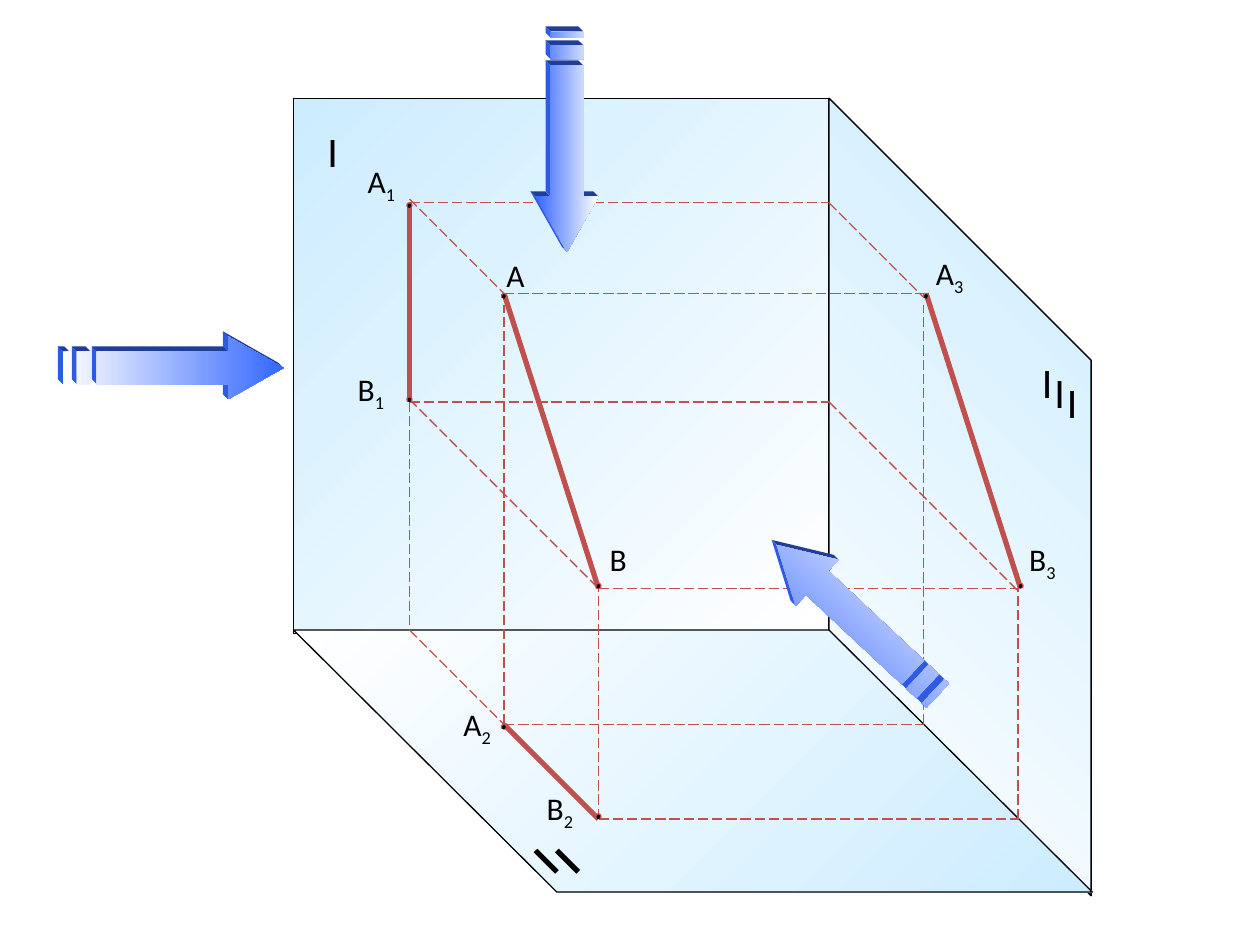
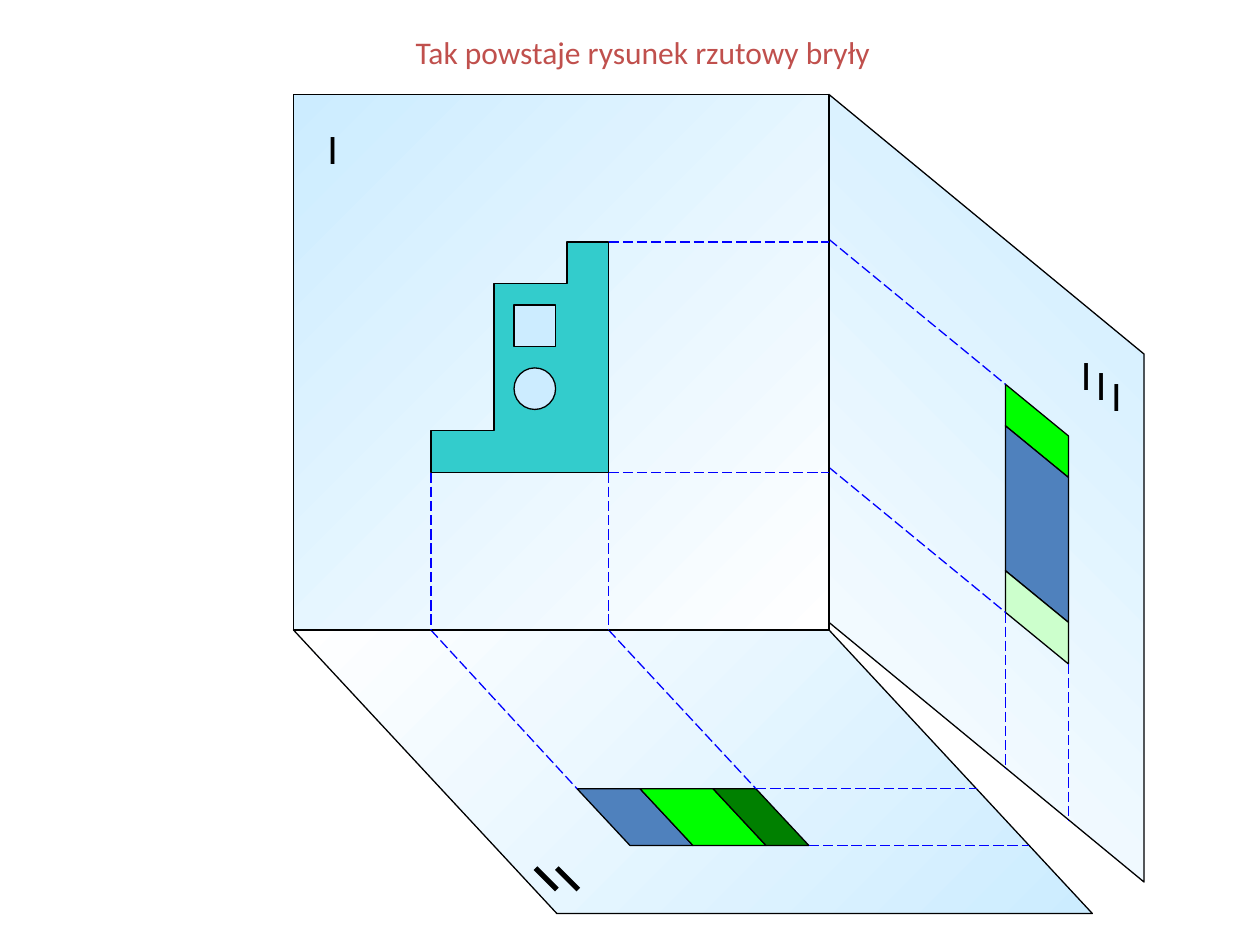
from math import cos, radians, sin

from lxml import etree
from pptx import Presentation
from pptx.dml.color import RGBColor
from pptx.enum import dml, shapes, text
from pptx.oxml import ns
from pptx.util import Inches, Pt

FONT = "Calibri"
BLACK = "000000"
WHITE = "FFFFFF"
SKY = "CCECFF"
RED = "C0504D"
BLUE = "0000FF"
STEEL = "4F81BD"
LIME = "00FF00"
ARROW = "3366FF"
TOP = "1F3D99"
SIDE = "2D5BE3"
EDGE = 4.25
RECT = shapes.MSO_SHAPE.RECTANGLE
OVAL = shapes.MSO_SHAPE.OVAL


def tint(value):
    return RGBColor.from_string(value)


def shift(x, y, points):
    return [(x + a, y + b) for a, b in points]


def paint(shape, fill, line=BLACK, width=0.75, dash=False):
    shape.shadow.inherit = False
    if isinstance(fill, str):
        shape.fill.solid()
        shape.fill.fore_color.rgb = tint(fill)
    else:
        first, last, angle = fill
        shape.fill.gradient()
        shape.fill.gradient_angle = -angle % 360
        for stop, color in zip(shape.fill.gradient_stops, (first, last)):
            stop.color.rgb = tint(color)
    if line:
        shape.line.color.rgb = tint(line)
        shape.line.width = Pt(width)
        if dash:
            shape.line.dash_style = dml.MSO_LINE.LONG_DASH
    else:
        shape.line.fill.background()


def block(slide, kind, x, y, w, h, fill, **style):
    shape = slide.shapes.add_shape(kind, Inches(x), Inches(y), Inches(w), Inches(h))
    paint(shape, fill, **style)


def outline(slide, loops, fill, **style):
    loops = [[(Inches(x), Inches(y)) for x, y in loop] for loop in loops]
    pen = slide.shapes.build_freeform(*loops[0][0], scale=1.0)
    pen.add_line_segments(loops[0][1:], close=True)
    for loop in loops[1:]:
        pen.move_to(*loop[0])
        pen.add_line_segments(loop[1:], close=True)
    paint(pen.convert_to_shape(), fill, **style)


def trace(slide, points, color, width=0.75, dash=True):
    for start, end in zip(points, points[1:]):
        ends = [Inches(v) for v in start + end]
        line = slide.shapes.add_connector(shapes.MSO_CONNECTOR.STRAIGHT, *ends)
        line.line.color.rgb = tint(color)
        line.line.width = Pt(width)
        if dash:
            line.line.dash_style = dml.MSO_LINE.LONG_DASH
        etree.SubElement(line._element.spPr, ns.qn("a:effectLst"))


def write(slide, words, x, y, w, h=0.37, size=18, color=BLACK, sub="",
          wrap=False, anchor=text.MSO_ANCHOR.MIDDLE):
    box = slide.shapes.add_textbox(Inches(x), Inches(y), Inches(w), Inches(h))
    frame = box.text_frame
    frame.word_wrap = wrap
    frame.auto_size = text.MSO_AUTO_SIZE.SHAPE_TO_FIT_TEXT
    frame.vertical_anchor = anchor
    for part in filter(None, (words, sub)):
        run = frame.paragraphs[0].add_run()
        run.text = part
        run.font.name = FONT
        run.font.size = Pt(size)
        run.font.color.rgb = tint(color)
    if sub:
        run._r.get_or_add_rPr().set("baseline", "-25000")


def mark(slide, x, y, w):
    write(slide, "I", x, y, w, 0.5, size=24, wrap=True, anchor=text.MSO_ANCHOR.TOP)


def front(slide, x, y):
    block(slide, RECT, x, y, EDGE, EDGE, (SKY, WHITE, 45))
    mark(slide, x + 0.17, y + 0.17, 0.25)


def wall(slide, x, y, w, drop, h, sign, step):
    corners = [(w, drop + h), (w, drop), (0, 0), (0, h)]
    outline(slide, [shift(x, y, corners)], (WHITE, SKY, 315))
    for i in range(3):
        mark(slide, x + sign[0] + i * step[0], y + sign[1] + i * step[1], 0.3)


def ground(slide, x, y, depth, sign):
    corners = [(0, 0), (EDGE, 0), (EDGE + 2.09, depth), (2.09, depth)]
    outline(slide, [shift(x, y, corners)], (WHITE, SKY, 45))
    for i in range(2):
        bar = [(0, 0), (0.17, 0.17)]
        trace(slide, shift(x + 1.92 + i * 0.17, y + sign, bar), BLACK, 3, False)


def segment(slide, x, y):
    a, b = (0.75, 0.72), (1.5, 3.06)
    a1, b1 = (0, 0), (0, 1.58)
    a2, b2 = (0.75, 4.14), (1.5, 4.89)
    a3, b3 = (4.1, 0.72), (4.85, 3.06)
    rays = [
        [(0, -0.03), a], [(0, 1.56), b], [a2, (0.75, 0.81)], [b2, b],
        [b1, (0, 3.39), b2],
        [a1, (3.33, 0), (4.08, 0.75)],
        [b1, (3.33, 1.58), (4.83, 3.08)],
        [a, (4.08, 0.72)], [b, (4.83, 3.06)],
        [a2, (4.08, 4.14), (4.08, 0.81)],
        [b2, (4.83, 4.89), (4.83, 3.06)],
    ]
    for ray in rays:
        trace(slide, shift(x, y, ray), RED)
    for pair in ((a3, b3), (a2, b2), (a, b), (a1, b1)):
        ends = shift(x, y, pair)
        trace(slide, ends, RED, 3, False)
        for (u, v), lift in zip(ends, (0.02, -0.02)):
            block(slide, OVAL, u - 0.02, v + lift - 0.02, 0.04, 0.04, BLACK,
                  line=RED, dash=True)
    names = [
        ("A", "", 0.67, 0.39), ("B", "", 1.49, 2.64),
        ("A", "1", -0.43, -0.34), ("B", "1", -0.51, 1.31),
        ("A", "2", 0.33, 3.97), ("B", "2", 0.99, 4.64),
        ("A", "3", 4.08, 0.39), ("B", "3", 4.82, 2.66),
    ]
    for name, sub, u, v in names:
        write(slide, name, x + u, y + v, 0.45 if sub else 0.36, sub=sub)


def arrow(slide, x, y, turn, fill, deep=0.04):
    bars = [[(u, 0.12), (v, 0.12), (v, 0.38), (u, 0.38)]
            for u, v in ((0, 0.05), (0.11, 0.22))]
    head = [(0.27, 0.12), (1.31, 0.12), (1.31, 0), (1.75, 0.25),
            (1.31, 0.5), (1.31, 0.38), (0.27, 0.38)]
    c, s = cos(radians(turn)), sin(radians(turn))
    loops = []
    for loop in bars + [head]:
        spun = [((u - 0.88) * c - (v - 0.25) * s, (u - 0.88) * s + (v - 0.25) * c)
                for u, v in loop]
        loops.append(shift(x + 0.88, y + 0.25, spun))
    sides = {TOP: [], SIDE: []}
    for loop in loops:
        for p, q in zip(loop, loop[1:] + loop[:1]):
            dx, dy = q[0] - p[0], q[1] - p[1]
            if dx - dy > 0.001:
                face = [p, q] + shift(-deep, -deep, [q, p])
                sides[TOP if dx > -dy else SIDE].append(face)
    for color, faces in sides.items():
        outline(slide, faces, color, line=None)
    outline(slide, loops, fill, line=None)


def solid(slide, x, y):
    for ray in ([(0, 1.83), (0, 3.08)], [(1.41, 1.83), (1.41, 3.08)],
                [(1.41, 0), (3.16, 0)], [(1.41, 1.83), (3.16, 1.83)]):
        trace(slide, shift(x, y, ray), BLUE)
    steps = [(1.08, 0), (1.08, 0.33), (0.5, 0.33), (0.5, 1.5),
             (0, 1.5), (0, 1.83), (1.41, 1.83), (1.41, 0)]
    outline(slide, [shift(x, y, steps)], "33CCCC")
    block(slide, OVAL, x + 0.66, y + 1, 0.33, 0.33, SKY)
    block(slide, RECT, x + 0.66, y + 0.5, 0.33, 0.33, SKY, width=1)


def profile(slide, x, y):
    w, drop = 0.5, 0.41
    levels = [0, 0.33, 1.48, 1.81]
    for high, low, color in zip(levels, levels[1:], (LIME, STEEL, "CCFFCC")):
        band = [(0, high), (w, high + drop), (w, low + drop), (0, low)]
        outline(slide, [shift(x, y, band)], color)
    for ray in ([(-1.4, -1.15), (0, 0)], [(-1.4, 0.66), (0, 1.81)],
                [(0, 1.81), (0, 3.05)], [(w, 2.22), (w, 3.46)]):
        trace(slide, shift(x, y, ray), BLUE)


def plan(slide, x, y):
    lean, deep = 0.42, 0.45
    marks = [0, 0.5, 1.08, 1.42]
    for left, right, color in zip(marks, marks[1:], (STEEL, LIME, "008000")):
        band = [(left, 0), (right, 0), (right + lean, deep), (left + lean, deep)]
        outline(slide, [shift(x, y, band)], color)
    for ray in ([(-1.16, -1.26), (0, 0)], [(0.25, -1.26), (1.42, 0)],
                [(1.42, 0), (3.17, 0)], [(1.84, deep), (3.59, deep)]):
        trace(slide, shift(x, y, ray), BLUE)


def lines(slide):
    front(slide, 2.33, 0.78)
    wall(slide, 6.58, 0.78, 2.08, 2.08, EDGE, (1.59, 2), (0.1, 0.08))
    ground(slide, 2.33, 5, 2.08, 1.75)
    segment(slide, 3.25, 1.61)
    arrow(slide, 0.5, 2.67, 0, (WHITE, ARROW, 0))
    arrow(slide, 5.92, 4.67, 223.1, (ARROW, WHITE, 313))
    arrow(slide, 3.62, 0.88, 90, (ARROW, WHITE, 0))


def body(slide):
    wall(slide, 6.58, 0.75, 2.5, 2.06, 4.19, (1.9, 1.97), (0.12, 0.08))
    profile(slide, 7.98, 3.05)
    ground(slide, 2.33, 5, 2.25, 1.89)
    plan(slide, 4.58, 6.26)
    front(slide, 2.33, 0.75)
    solid(slide, 3.42, 1.92)
    write(slide, "Tak powstaje rysunek rzutowy bryły", 3.2, 0.23, 4.01, color=RED)


def main():
    deck = Presentation()
    deck.slide_width = Inches(10)
    deck.slide_height = Inches(7.5)
    for draw in (lines, body):
        draw(deck.slides.add_slide(deck.slide_layouts[6]))
    deck.save("out.pptx")


if __name__ == "__main__":
    main()
